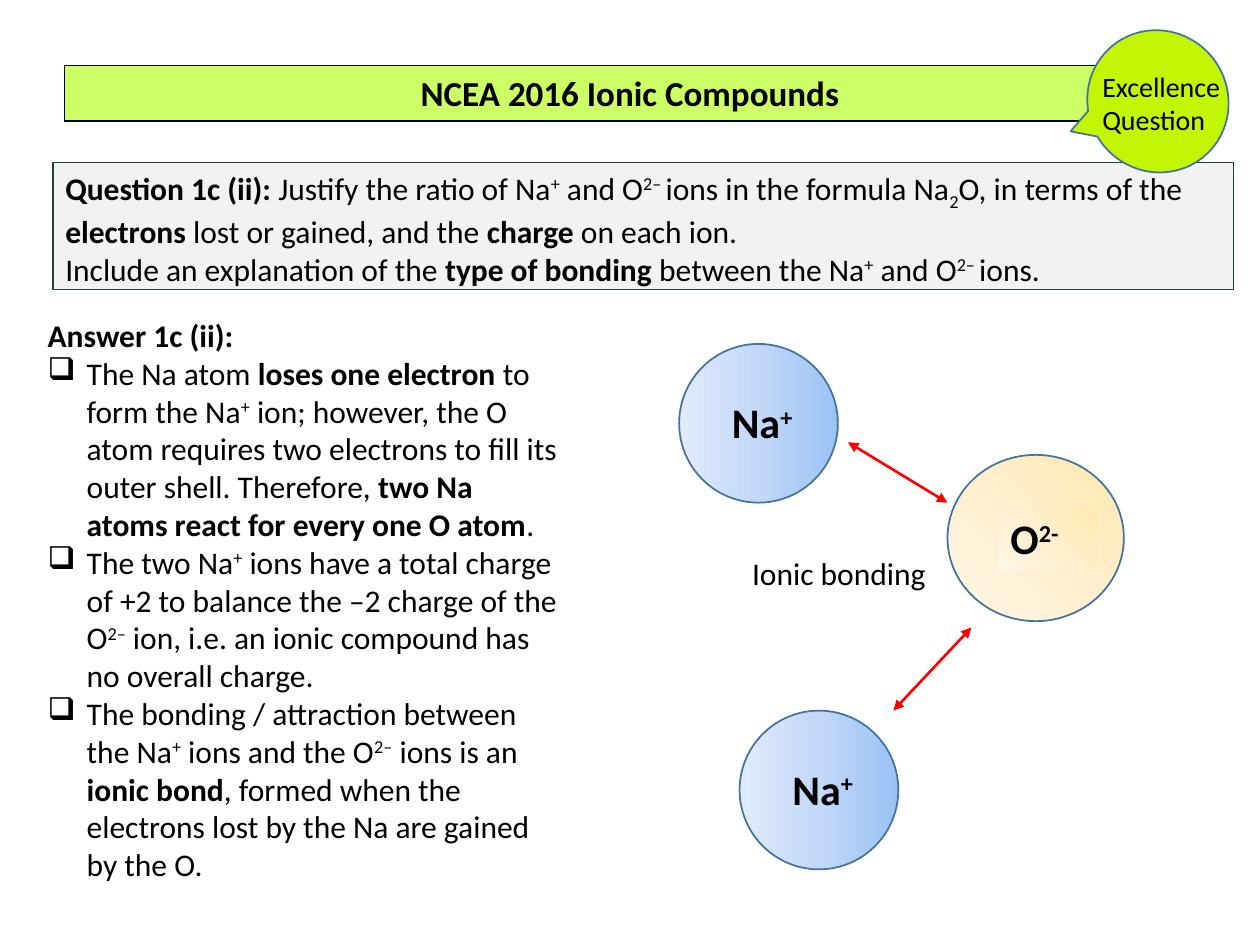
from copy import deepcopy
from dataclasses import dataclass

from lxml import etree
from pptx import Presentation
from pptx.dml.color import RGBColor
from pptx.enum import shapes, text
from pptx.oxml import ns
from pptx.util import Inches, Pt


@dataclass(frozen=True)
class Theme:
    font: str = "Calibri"
    ink: str = "000000"
    banner: str = "CCFF66"
    panel: str = "EFEFEE"
    panel_line: str = "1B452F"
    badge: str = "C2F604"
    outline: str = "43739E"
    arrow: str = "FF0000"
    sodium: tuple = ("9AC3F5", "C2D8F8", "E1EBFB")
    oxide: tuple = ("FFE7AF", "FFEFCE", "FFF7E7")
    title: int = 20
    body: int = 18
    note: int = 16
    ion: int = 24


THEME = Theme()
KIND = shapes.MSO_SHAPE
HALF_BULLET = Inches(0.31)


def add_xml(parent, tag, **attributes):
    child = etree.SubElement(parent, ns.qn(tag))
    for name, value in attributes.items():
        child.set(name, value)
    return child


def add_runs(para, markup, size, bold):
    """Write runs; * toggles bold, ^ superscript and _ subscript."""
    for i, weight_part in enumerate(markup.split("*")):
        for j, raised_part in enumerate(weight_part.split("^")):
            for k, words in enumerate(raised_part.split("_")):
                if not words:
                    continue
                span = para.add_run()
                span.text = words
                look = {"name": THEME.font, "size": Pt(size), "bold": bold != bool(i % 2)}
                for name, value in look.items():
                    setattr(span.font, name, value)
                span.font.color.rgb = RGBColor.from_string(THEME.ink)
                baseline = 30000 if j % 2 else -25000 if k % 2 else 0
                if baseline:
                    span._r.get_or_add_rPr().set("baseline", str(baseline))


def write(shape, lines, size, bold=False, align=text.PP_ALIGN.LEFT):
    frame = shape.text_frame
    look = {"word_wrap": True, "auto_size": text.MSO_AUTO_SIZE.NONE,
            "vertical_anchor": text.MSO_ANCHOR.TOP}
    for name, value in look.items():
        setattr(frame, name, value)
    for index, line in enumerate(lines):
        para = frame.add_paragraph() if index else frame.paragraphs[0]
        para.alignment = align
        add_runs(para, line, size, bold)


def add_label(page, box, lines, size, bold=False):
    label = page.shapes.add_textbox(*map(Inches, box))
    write(label, lines, size, bold)
    return label


def add_bullet(para):
    properties = para._p.get_or_add_pPr()
    properties.set("marL", str(HALF_BULLET))
    properties.set("indent", str(-HALF_BULLET))
    add_xml(properties, "a:buChar", char="❑")


def fill_gradient(shape, colours, angle):
    """Spread the colours evenly; the angle runs clockwise."""
    shape.fill.gradient()
    shape.fill.gradient_angle = 360 - angle
    stop_list = shape._element.spPr.find(".//" + ns.qn("a:gsLst"))
    while len(stop_list) < len(colours):
        stop_list.append(deepcopy(stop_list[0]))
    for index, (stop, colour) in enumerate(zip(shape.fill.gradient_stops, colours)):
        stop.color.rgb = RGBColor.from_string(colour)
        stop.position = index / (len(colours) - 1)


def add_figure(page, kind, box, fill, line=None, width=1, angle=0):
    figure = page.shapes.add_shape(kind, *map(Inches, box))
    figure.shadow.inherit = False
    if isinstance(fill, tuple):
        fill_gradient(figure, fill, angle)
    else:
        figure.fill.solid()
        figure.fill.fore_color.rgb = RGBColor.from_string(fill)
    if line:
        figure.line.color.rgb = RGBColor.from_string(line)
        figure.line.width = Pt(width)
    else:
        figure.line.fill.background()
    return figure


def add_banner(page, box):
    banner = add_figure(page, KIND.RECTANGLE, box, THEME.banner, THEME.ink, 0.75)
    write(banner, ["NCEA 2016 Ionic Compounds"], THEME.title, True, text.PP_ALIGN.CENTER)


def add_question(page, box):
    panel = add_figure(page, KIND.RECTANGLE, box, THEME.panel, THEME.panel_line, 0.75)
    colour = panel._element.spPr.find(ns.qn("a:solidFill"))[0]
    add_xml(colour, "a:alpha", val="79000")
    write(panel, [
        "*Question 1c (ii): *Justify the ratio of Na^+^ and O^2– ^ions in the formula Na_2_O, "
        "in terms of the *electrons *lost or gained, and the *charge *on each ion.",
        "Include an explanation of the *type of bonding *between the Na^+^ and O^2– ^ions.",
    ], THEME.body)


def add_badge(page, box):
    left, top, width, height = box
    badge = add_figure(page, KIND.OVAL_CALLOUT, box, THEME.badge, THEME.outline)
    badge.rotation = 52.1
    add_label(page, (left + 0.03, top + 0.25, width + 0.12, 0.64),
              ["Excellence", "Question"], THEME.note)


def add_answer(page, box):
    answer = add_label(page, box, [
        "*Answer 1c (ii):*",
        "The Na atom *loses one electron *to form the Na^+^ ion; however, the O atom requires "
        "two electrons to fill its outer shell. Therefore,* two Na atoms react for every one "
        "O atom*.",
        "The two Na^+^ ions have a total charge of +2 to balance the –2 charge of the O^2–^ "
        "ion, i.e. an ionic compound has no overall charge.",
        "The bonding / attraction between the Na^+^ ions and the O^2–^ ions is an *ionic bond*, "
        "formed when the electrons lost by the Na are gained by the O.",
    ], THEME.body)
    for para in answer.text_frame.paragraphs[1:]:
        add_bullet(para)


def add_sodium_ion(page, box):
    left, top = box[:2]
    add_figure(page, KIND.OVAL, box, THEME.sodium, THEME.outline, angle=180)
    add_label(page, (left + 0.32, top + 0.37, 0.79, 0.5), ["Na^+^"], THEME.ion, True)


def add_oxide_ion(page, box):
    left, top = box[:2]
    add_figure(page, KIND.OVAL, box, THEME.oxide, THEME.outline, angle=135)
    plate = add_figure(page, KIND.RECTANGLE, (left + 0.4, top + 0.41, 0.79, 0.5),
                       THEME.oxide, angle=135)
    write(plate, ["O^2-^"], THEME.ion, True)


def add_attraction(page, start, end):
    arrow = page.shapes.add_connector(shapes.MSO_CONNECTOR.STRAIGHT,
                                      *map(Inches, start + end))
    arrow.line.color.rgb = RGBColor.from_string(THEME.arrow)
    arrow.line.width = Pt(1.5)
    for tag in ("a:headEnd", "a:tailEnd"):
        add_xml(arrow.line._get_or_add_ln(), tag, type="triangle")
    add_xml(arrow._element.spPr, "a:effectLst")


def add_bonding_diagram(page, box):
    left, top = box[:2]
    for x, y in ((0, 0), (0.48, 2.91)):
        add_sodium_ion(page, (left + x, top + y, 1.26, 1.26))
    add_oxide_ion(page, (left + 2.13, top + 0.88, 1.4, 1.32))
    for x1, y1, x2, y2 in ((1.34, 0.78, 2.13, 1.26), (1.7, 2.91, 2.32, 2.25)):
        add_attraction(page, (left + x1, top + y1), (left + x2, top + y2))
    add_label(page, (left + 0.48, top + 1.62, 1.65, 0.4), ["Ionic bonding"], THEME.body)


def main():
    deck = Presentation()
    deck.slide_width, deck.slide_height = Inches(10), Inches(7.5)
    page = deck.slides.add_slide(deck.slide_layouts[6])
    add_banner(page, (0.51, 0.52, 8.98, 0.44))
    add_question(page, (0.42, 1.29, 9.37, 1.01))
    add_badge(page, (8.62, 0.25, 1.14, 1.11))
    add_answer(page, (0.28, 2.46, 4.25, 4.64))
    add_bonding_diagram(page, (5.39, 2.73, 3.53, 4.17))
    deck.save("out.pptx")


if __name__ == "__main__":
    main()
